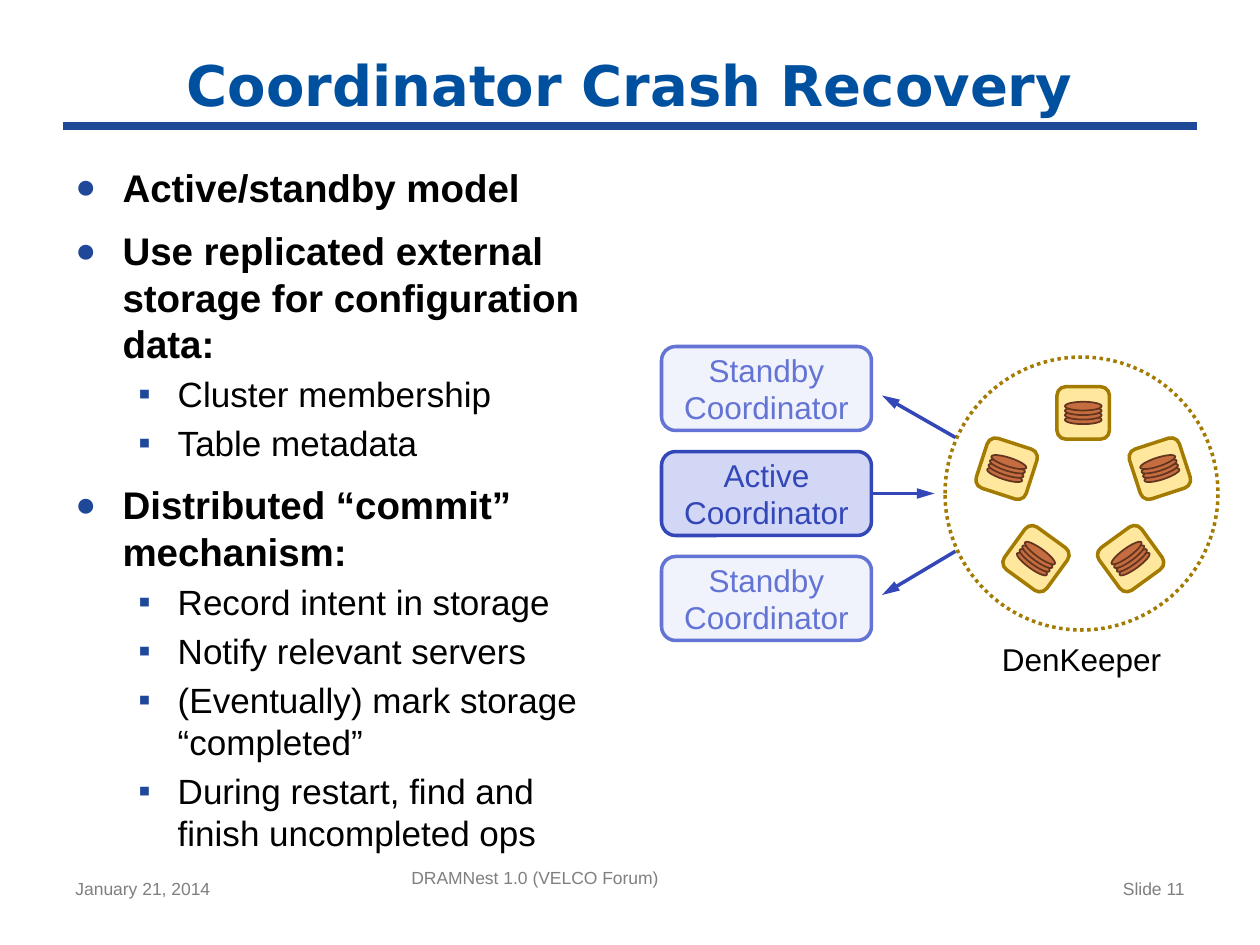
from dataclasses import dataclass
from math import cos, radians, sin

from lxml.etree import SubElement
from pptx import Presentation
from pptx.dml.color import RGBColor
from pptx.enum.dml import MSO_LINE as Dash
from pptx.enum.shapes import MSO_CONNECTOR as Link, MSO_SHAPE as Kind
from pptx.enum.text import MSO_ANCHOR as Anchor, PP_ALIGN as Align
from pptx.oxml.ns import qn
from pptx.util import Pt


@dataclass(frozen=True)
class Theme:
    """Colours, fonts and type sizes of the slide."""
    title: str = "0050A0"
    rule: str = "1F4899"
    ink: str = "000000"
    gray: str = "7F7F7F"
    active: str = "3447B8"
    active_fill: str = "D2D7F6"
    standby: str = "6474D4"
    standby_fill: str = "F0F2FC"
    gold: str = "A27B00"
    cream: str = "FFE89D"
    brown: str = "64351E"
    copper: str = "C56D41"
    head: str = "DejaVu Sans"
    font: str = "Arial"
    title_size: int = 32
    point_size: int = 22
    sub_size: int = 20
    label_size: int = 18
    foot_size: int = 10


T = Theme()
POINTS = [
    (0, "Active/standby model"),
    (0, "Use replicated external storage for configuration data:"),
    (1, "Cluster membership"),
    (1, "Table metadata"),
    (0, "Distributed “commit” mechanism:"),
    (1, "Record intent in storage"),
    (1, "Notify relevant servers"),
    (1, "(Eventually) mark storage “completed”"),
    (1, "During restart, find and finish uncompleted ops"),
]


def rgb(tone):
    """Turn a hex string into a colour."""
    return RGBColor.from_string(tone)


def style(para, size, tone, font=T.font, bold=False):
    """Format every run of a paragraph."""
    for run in para.runs:
        run.font.size, run.font.name, run.font.bold = Pt(size), font, bold
        run.font.color.rgb = rgb(tone)


def write(frame, text, size, tone, align=Align.LEFT, **look):
    """Fill a text frame with one styled paragraph."""
    frame.word_wrap = True
    frame.text = text
    para = frame.paragraphs[0]
    para.alignment = align
    style(para, size, tone, **look)


def add_text(slide, box):
    """Add an empty text box and return its frame."""
    frame = slide.shapes.add_textbox(*map(Pt, box)).text_frame
    frame.word_wrap = True
    return frame


def add_form(shapes, kind, box, fill, edge, width=2, turn=0):
    """Add an outlined preset shape."""
    form = shapes.add_shape(kind, *map(Pt, box))
    form.shadow.inherit = False
    form.rotation = turn
    if fill:
        form.fill.solid()
        form.fill.fore_color.rgb = rgb(fill)
    else:
        form.fill.background()
    form.line.color.rgb = rgb(edge)
    form.line.width = Pt(width)
    return form


def add_line(slide, start, end, tone, width, arrow=False):
    """Add a straight line, with an arrowhead if asked."""
    line = slide.shapes.add_connector(Link.STRAIGHT, *map(Pt, start + end))
    line.line.color.rgb = rgb(tone)
    line.line.width = Pt(width)
    props = line._element.spPr
    if arrow:
        SubElement(props.find(qn("a:ln")), qn("a:tailEnd"), type="triangle", len="lg")
    SubElement(props, qn("a:effectLst"))


def add_bullet(para, mark, scale, left, hang):
    """Give a paragraph a coloured bullet and a hanging indent."""
    props = para._p.get_or_add_pPr()
    props.set("marL", str(Pt(left)))
    props.set("indent", str(Pt(-hang)))
    tone = SubElement(props, qn("a:buClr"))
    SubElement(tone, qn("a:srgbClr"), val=T.rule)
    SubElement(props, qn("a:buSzPct"), val=str(scale * 1000))
    SubElement(props, qn("a:buFont"), typeface=T.font)
    SubElement(props, qn("a:buChar"), char=mark)


def draw_title(slide, left, top, width, height):
    """Draw the heading with the rule beneath it."""
    base = top + height
    add_line(slide, (left, base), (left + width, base), T.rule, 4.5)
    frame = add_text(slide, (left, top, width, height))
    frame.vertical_anchor = Anchor.MIDDLE
    write(frame, "Coordinator Crash Recovery", T.title_size, T.title,
          Align.CENTER, font=T.head, bold=True)


def draw_points(slide, left, top, width, height):
    """Draw the two-level bullet list."""
    frame = add_text(slide, (left, top, width, height))
    for i, (level, text) in enumerate(POINTS):
        para = frame.add_paragraph() if i else frame.paragraphs[0]
        para.text, para.level = text, level
        para.space_before = Pt(4 if level else 10 if i else 0)
        if level:
            add_bullet(para, "▪", 100, 58.5, 22.5)
            style(para, T.sub_size, T.ink)
        else:
            add_bullet(para, "●", 90, 27, 27)
            style(para, T.point_size, T.ink, bold=True)


def draw_node(slide, box, role, tone, fill):
    """Draw one coordinator box."""
    form = add_form(slide.shapes, Kind.ROUNDED_RECTANGLE, box, fill, tone)
    form.text_frame.vertical_anchor = Anchor.MIDDLE
    write(form.text_frame, f"{role}\vCoordinator", T.label_size, tone, Align.CENTER)


def draw_server(shapes, mid_x, mid_y, turn, tilt, side=30):
    """Draw a storage tile with its stack of disks."""
    wide, high, step = 21, 5, 2.6
    tile = (mid_x - side / 2, mid_y - side / 2, side, side)
    add_form(shapes, Kind.ROUNDED_RECTANGLE, tile, T.cream, T.gold, turn=turn)
    for i in range(4):
        drop = (1.5 - i) * step
        x = mid_x - drop * sin(radians(tilt))
        y = mid_y + drop * cos(radians(tilt))
        disk = (x - wide / 2, y - high / 2, wide, high)
        add_form(shapes, Kind.OVAL, disk, T.copper, T.brown, 1, tilt)


def draw_store(slide, left, top, width, height):
    """Draw the dotted ring of five servers and its label."""
    shapes = slide.shapes.add_group_shape().shapes
    mid_x, mid_y, reach = left + width / 2 + 1, top + height / 2, 46
    for i in range(5):
        turn = 72 * i
        tilt = -18 * i if i < 3 else 18 * (5 - i)
        x = mid_x + reach * sin(radians(turn))
        y = mid_y - reach * cos(radians(turn))
        draw_server(shapes, x, y, turn, tilt)
    ring = add_form(shapes, Kind.OVAL, (left, top, width, height), None, T.gold)
    ring.line.dash_style = Dash.ROUND_DOT
    frame = add_text(slide, (left + 23, top + height + 6, 110, 22))
    frame.margin_left = frame.margin_right = frame.margin_top = frame.margin_bottom = 0
    write(frame, "DenKeeper", T.label_size, T.ink, Align.CENTER)


def draw_cluster(slide, left, top, width, height):
    """Draw the coordinators, the store and the arrows between them."""
    for row in (2, 0):
        draw_node(slide, (left, top + 60 * row, 120, 48), "Standby",
                  T.standby, T.standby_fill)
    draw_store(slide, left + width - 156, top + 6, 156, 156)
    draw_node(slide, (left, top + 60, 120, 48), "Active", T.active, T.active_fill)
    for x, y, to_x, to_y in ((120, 84, 156, 84), (168, 52, 126, 28), (168, 117, 126, 142)):
        add_line(slide, (left + x, top + y), (left + to_x, top + to_y), T.active, 2, True)


def draw_foot(slide, left, top, width, height):
    """Draw the date, the talk name and the slide number."""
    parts = [
        (0, 6, 168, "January 21, 2014", Align.LEFT),
        (192, 0, 270, "DRAMNest 1.0 (VELCO Forum)", Align.LEFT),
        (width - 168, 6, 168, "Slide 11", Align.RIGHT),
    ]
    for x, y, wide, text, align in parts:
        frame = add_text(slide, (left + x, top + y, wide, height - 6))
        write(frame, text, T.foot_size, T.gray, align)


def main():
    """Build the slide and save it."""
    deck = Presentation()
    deck.slide_width, deck.slide_height = Pt(720), Pt(540)
    slide = deck.slides.add_slide(deck.slide_layouts[6])
    draw_title(slide, 36, 24, 648, 48)
    draw_points(slide, 36, 90, 318, 392)
    draw_foot(slide, 36, 492, 648, 37)
    draw_cluster(slide, 378, 198, 318, 192)
    deck.save("out.pptx")


if __name__ == "__main__":
    main()
